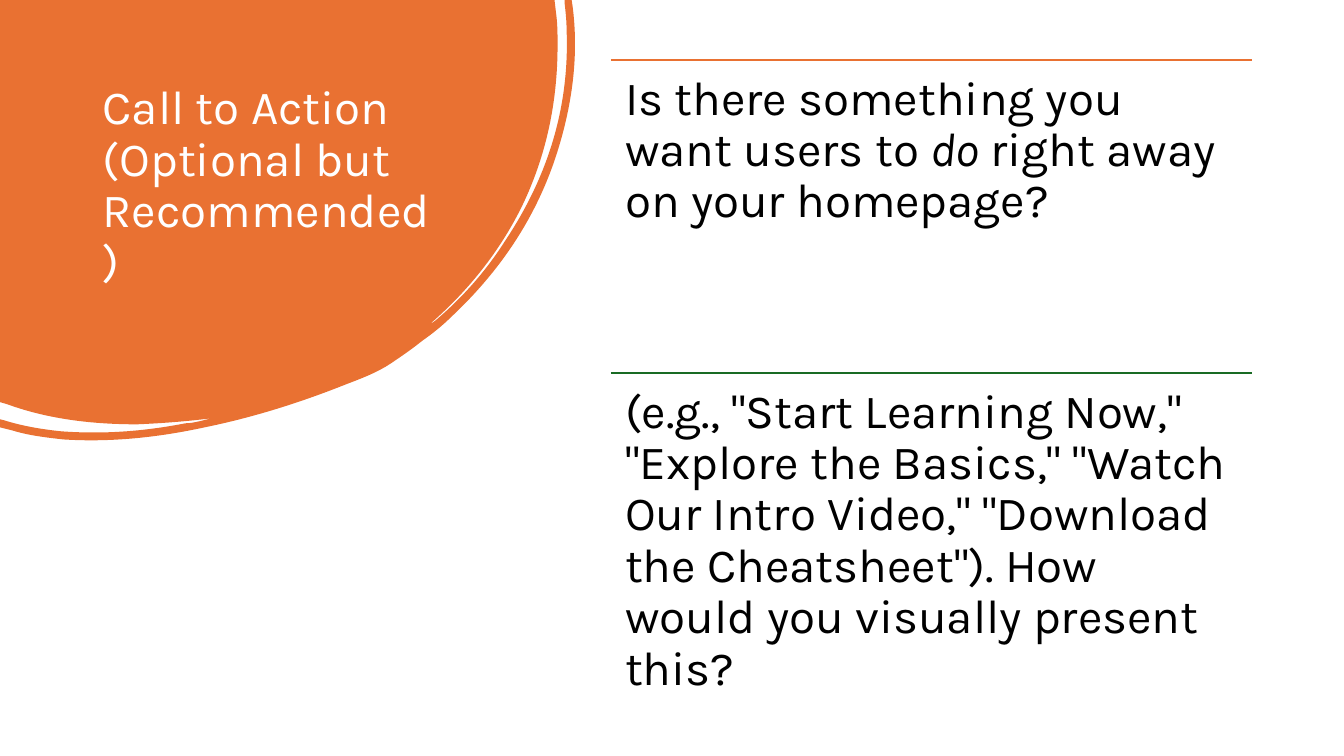
from lxml import etree
from pptx import Presentation
from pptx.dml.color import RGBColor
from pptx.enum.shapes import MSO_CONNECTOR
from pptx.enum.text import MSO_ANCHOR, MSO_AUTO_SIZE, PP_ALIGN
from pptx.oxml.ns import qn
from pptx.util import Inches, Pt

STRAIGHT = MSO_CONNECTOR.STRAIGHT
TOP, MIDDLE = MSO_ANCHOR.TOP, MSO_ANCHOR.MIDDLE
LEFT = PP_ALIGN.LEFT
NO_AUTOFIT = MSO_AUTO_SIZE.NONE

ORANGE = RGBColor(0xE9, 0x71, 0x32)
GREEN = RGBColor(0x19, 0x6B, 0x24)
BLACK = RGBColor(0, 0, 0)
WHITE = RGBColor(0xFF, 0xFF, 0xFF)

SLIDE_WIDTH, SLIDE_HEIGHT = Inches(13.33), Inches(7.5)
COLUMN, ROW = SLIDE_WIDTH / 100, SLIDE_HEIGHT / 100
PROMPT_LEFT, PROMPT_WIDTH = 45.46, 47.7
PROMPT_TOP, PROMPT_HEIGHT = 7.92, 41.4

PROMPTS = [
    (ORANGE, [("Is there something you want users to ", False), ("do", True),
              (" right away on your homepage?", False)]),
    (GREEN, [('(e.g., "Start Learning Now," "Explore the Basics," "Watch Our '
              'Intro Video," "Download the Cheatsheet"). How would you '
              'visually present this?', False)]),
]

BLOB_START = (0, 0)
BLOB_OUTLINE = [
    (5.5, 0), (5.52, 0.17),
    (5.53, 0.26, 5.53, 0.36, 5.53, 0.45),
    (5.53, 1.01, 5.42, 1.54, 5.18, 2.04),
    (4.96, 2.49, 4.65, 2.88, 4.27, 3.21),
    (4.29, 3.21, 4.3, 3.19, 4.32, 3.18),
    (4.59, 2.95, 4.82, 2.69, 5.01, 2.39),
    (5.43, 1.76, 5.65, 1.07, 5.62, 0.3),
    (5.62, 0.21, 5.61, 0.12, 5.6, 0.03),
    (5.6, 0), (5.67, 0), (5.68, 0.07),
    (5.74, 0.54, 5.68, 1.02, 5.53, 1.5),
    (5.33, 2.14, 4.97, 2.68, 4.48, 3.14),
    (4.39, 3.23, 4.29, 3.31, 4.19, 3.38),
    (4.09, 3.46, 3.99, 3.53, 3.87, 3.61),
    (3.75, 3.69, 3.6, 3.75, 3.44, 3.81),
    (2.99, 3.99, 2.52, 4.14, 2.03, 4.24),
    (1.57, 4.34, 1.1, 4.39, 0.63, 4.36),
    (0.45, 4.34, 0.28, 4.32, 0.12, 4.27),
    (0, 4.24), (0, 4.16), (0.04, 4.17),
    (0.23, 4.23, 0.42, 4.26, 0.61, 4.28),
    (1.03, 4.31, 1.43, 4.28, 1.84, 4.2),
    (1.89, 4.2, 1.93, 4.19, 1.98, 4.18),
    (2.02, 4.17, 2.06, 4.16, 2.1, 4.15),
    (1.86, 4.18, 1.61, 4.2, 1.36, 4.21),
    (0.92, 4.21, 0.48, 4.16, 0.07, 4.01),
    (0, 3.99),
]


def bend(line, controls):
    """Turn a straight outline segment into a cubic curve."""
    line.tag = qn("a:cubicBezTo")
    for index, (x, y) in enumerate(zip(controls[::2], controls[1::2])):
        control = etree.Element(qn("a:pt"), x=str(Inches(x)), y=str(Inches(y)))
        line.insert(index, control)


def add_blob(slide):
    """Draw the orange blob behind the title."""
    builder = slide.shapes.build_freeform(*BLOB_START)
    builder.add_line_segments(
        [(Inches(segment[-2]), Inches(segment[-1])) for segment in BLOB_OUTLINE],
        close=True)
    blob = builder.convert_to_shape()
    lines = list(blob.element.iter(qn("a:lnTo")))
    for line, segment in zip(lines, BLOB_OUTLINE):
        if len(segment) > 2:
            bend(line, segment[:-2])
    blob.shadow.inherit = False
    blob.fill.solid()
    blob.fill.fore_color.rgb = ORANGE
    blob.line.fill.background()
    blob.element.getparent().insert(2, blob.element)


def add_rule(slide, left, top, width, color):
    """Draw a horizontal rule placed on the grid."""
    y = round(top * ROW)
    rule = slide.shapes.add_connector(
        STRAIGHT, round(left * COLUMN), y, round((left + width) * COLUMN), y)
    rule.line.color.rgb = color
    rule.line.width = Pt(1.5)
    etree.SubElement(rule.element.spPr, qn("a:effectLst"))


def place(placeholder, left, top, width, height):
    """Move a placeholder to its grid cell."""
    placeholder.left, placeholder.top = round(left * COLUMN), round(top * ROW)
    placeholder.width, placeholder.height = round(width * COLUMN), round(height * ROW)


def write_text(placeholder, pieces, *, color, anchor, inset_x, inset_y,
               size=34, font="Karla"):
    """Write (text, italic) pieces as one unbulleted paragraph."""
    frame = placeholder.text_frame
    frame.word_wrap = True
    frame.auto_size = NO_AUTOFIT
    frame.vertical_anchor = anchor
    frame.margin_left = frame.margin_right = Inches(inset_x)
    frame.margin_top = frame.margin_bottom = Inches(inset_y)
    paragraph = frame.paragraphs[0]
    properties = paragraph._p.get_or_add_pPr()
    properties.set("marL", "0")
    properties.set("indent", "0")
    etree.SubElement(properties, qn("a:buNone"))
    paragraph.alignment = LEFT
    paragraph.line_spacing = 0.9
    paragraph.space_before = Pt(0)
    for text, italic in pieces:
        run = paragraph.add_run()
        run.text = text
        run.font.name = font
        run.font.size = Pt(size)
        run.font.italic = italic
        run.font.color.rgb = color


def main():
    """Build the call-to-action slide."""
    deck = Presentation()
    deck.slide_width, deck.slide_height = SLIDE_WIDTH, SLIDE_HEIGHT
    slide = deck.slides.add_slide(deck.slide_layouts[3])
    add_blob(slide)

    title = slide.shapes.title
    place(title, 6.9, 9.87, 26.4, 29.6)
    write_text(title, [("Call to Action (Optional but Recommended)", False)],
               color=WHITE, anchor=MIDDLE, inset_x=0.1, inset_y=0.05)

    for index, (rule_color, pieces) in enumerate(PROMPTS):
        top = PROMPT_TOP + index * PROMPT_HEIGHT
        add_rule(slide, PROMPT_LEFT, top, PROMPT_WIDTH, rule_color)
        prompt = slide.placeholders[index + 1]
        place(prompt, PROMPT_LEFT, top, PROMPT_WIDTH, PROMPT_HEIGHT)
        write_text(prompt, pieces, color=BLACK, anchor=TOP,
                   inset_x=0.14, inset_y=0.14)

    deck.save("out.pptx")


if __name__ == "__main__":
    main()
